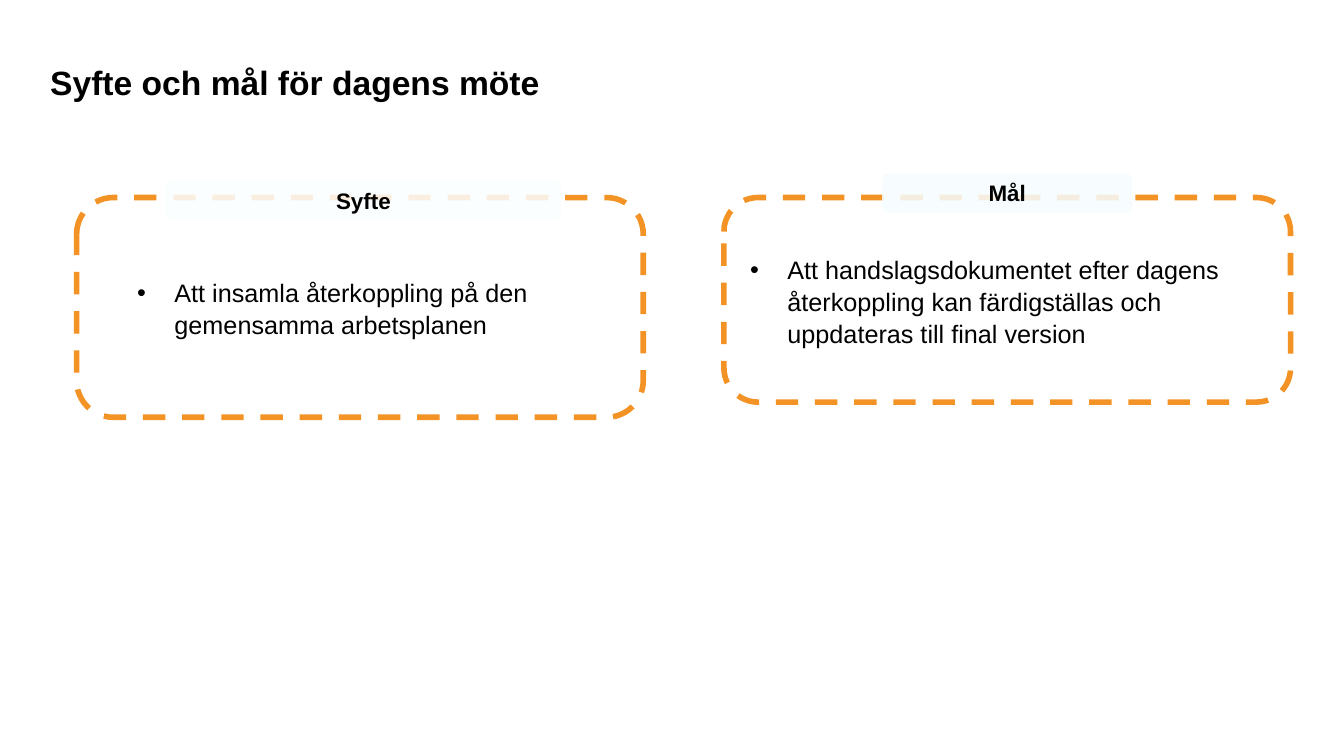
"""Slide with the purpose and the goal of today's meeting in two dashed panels."""
from lxml import etree
from pptx import Presentation
from pptx.dml.color import RGBColor
from pptx.enum.dml import MSO_LINE
from pptx.enum.shapes import MSO_SHAPE
from pptx.enum.text import MSO_ANCHOR, PP_ALIGN
from pptx.oxml.ns import qn
from pptx.util import Inches, Pt

COLORS = {"text": "000000", "border": "F39325", "purpose": "FBFEFF", "goal": "F6FCFE"}


def add_text(sp, text, size, bold=False, align=PP_ALIGN.LEFT, anchor=MSO_ANCHOR.TOP,
             spacing=None, bullet=False):
    tf = sp.text_frame
    tf.word_wrap = True
    tf.vertical_anchor = anchor
    p = tf.paragraphs[0]
    p.alignment = align
    if spacing:
        p.line_spacing = spacing
    if bullet:
        tf.margin_left = tf.margin_top = Inches(0.04)
        tf.margin_right = tf.margin_bottom = 0
        pPr = p._p.get_or_add_pPr()
        pPr.set("marL", str(Inches(0.37)))
        pPr.set("indent", str(-Inches(0.37)))
        etree.SubElement(pPr, qn("a:buFont")).set("typeface", "Arial")
        etree.SubElement(pPr, qn("a:buChar")).set("char", "•")
    r = p.add_run()
    r.text = text
    r.font.name = "Arial"
    r.font.size = Pt(size)
    r.font.bold = bold
    r.font.color.rgb = RGBColor.from_string(COLORS["text"])


def add_round_rect(box):
    sp = s.shapes.add_shape(MSO_SHAPE.ROUNDED_RECTANGLE, *map(Inches, box))
    sp.shadow.inherit = False
    return sp


prs = Presentation()
prs.slide_width, prs.slide_height = Inches(13.33), Inches(7.5)
s = prs.slides.add_slide(prs.slide_layouts[6])

title = s.shapes.add_textbox(Inches(0.4), Inches(0.29), Inches(12.4), Inches(0.78))
add_text(title, "Syfte och mål för dagens möte", 24, bold=True,
         anchor=MSO_ANCHOR.BOTTOM, spacing=0.95)

panels = [
    ("Syfte", "purpose", (0.76, 1.96, 5.62, 2.18), (1.64, 1.79, 3.93, 0.39),
     (1.32, 2.7, 4.25, 2.59), "Att insamla återkoppling på den gemensamma arbetsplanen"),
    ("Mål", "goal", (7.18, 1.96, 5.62, 2.03), (8.75, 1.72, 2.48, 0.39),
     (7.4, 2.47, 5.17, 1.84), "Att handslagsdokumentet efter dagens återkoppling kan "
     "färdigställas och uppdateras till final version"),
]
for heading, color, frame_box, label_box, body_box, body_text in panels:
    frame = add_round_rect(frame_box)
    frame.fill.background()
    frame.line.color.rgb = RGBColor.from_string(COLORS["border"])
    frame.line.width = Pt(4)
    frame.line.dash_style = MSO_LINE.DASH

    label = add_round_rect(label_box)
    label.fill.solid()
    label.fill.fore_color.rgb = RGBColor.from_string(COLORS[color])
    rgb = label._element.spPr.find(qn("a:solidFill")).find(qn("a:srgbClr"))
    etree.SubElement(rgb, qn("a:alpha")).set("val", "86000")
    label.line.fill.background()
    add_text(label, heading, 16, bold=True, align=PP_ALIGN.CENTER, anchor=MSO_ANCHOR.MIDDLE)

    body = s.shapes.add_textbox(*map(Inches, body_box))
    add_text(body, body_text, 18, spacing=1.05, bullet=True)

prs.save("out.pptx")
